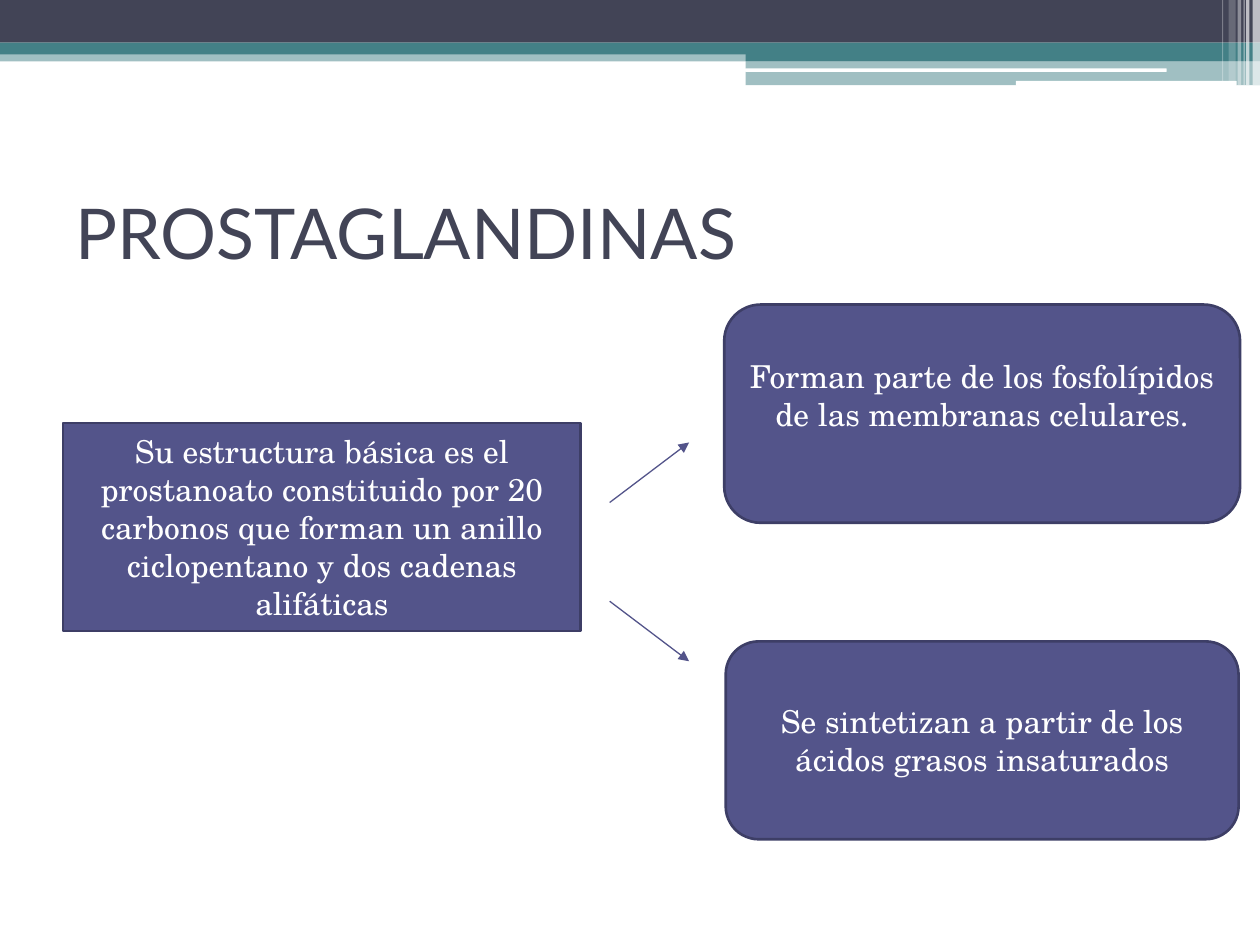
"""Build a slide on the structure and origin of prostaglandins."""
from lxml import etree
from pptx import Presentation
from pptx.dml.color import RGBColor
from pptx.enum.shapes import MSO_CONNECTOR, MSO_SHAPE
from pptx.enum.text import MSO_ANCHOR, PP_ALIGN
from pptx.oxml.ns import qn
from pptx.util import Cm, Pt

RECT = MSO_SHAPE.RECTANGLE
ROUND = MSO_SHAPE.ROUNDED_RECTANGLE
STRAIGHT = MSO_CONNECTOR.STRAIGHT
MIDDLE = MSO_ANCHOR.MIDDLE
CENTER = PP_ALIGN.CENTER
NAVY, TEAL, WHITE = "424456", "438086", "FFFFFF"
VIOLET, BORDER = "53548A", "3D3E66"


def color(hex_string):
    return RGBColor.from_string(hex_string)


def add_block(kind, left, top, width, height, fill, opacity=100):
    block = slide.shapes.add_shape(kind, Cm(left), Cm(top), Cm(width), Cm(height))
    block.shadow.inherit = False
    block.fill.solid()
    block.fill.fore_color.rgb = color(fill)
    block.line.fill.background()
    if opacity < 100:
        tint = block.fill._xPr.find(qn("a:solidFill"))[0]
        etree.SubElement(tint, qn("a:alpha"), val=str(opacity * 1000))
    return block


deck = Presentation()
deck.slide_width, deck.slide_height = Cm(25.4), Cm(19.05)
slide = deck.slides.add_slide(deck.slide_layouts[6])

bands = [
    (RECT, 0, 1.01, 25.4, 0.23, TEAL, 50),
    (RECT, 0, 0, 25.4, 0.86, NAVY, 100),
    (RECT, 0, 0.86, 25.4, 0.24, TEAL, 100),
    (RECT, 15.03, 1, 10.37, 0.23, TEAL, 100),
    (RECT, 15.03, 1.23, 10.37, 0.49, TEAL, 50),
    (ROUND, 15.02, 1.38, 8.5, 0.07, WHITE, 100),
    (ROUND, 20.48, 1.63, 4.45, 0.1, WHITE, 100),
]
for band in bands:
    add_block(*band)

stripes = [
    (25.25, 0.15, 1.72, 65),
    (25.12, 0.07, 1.72, 65),
    (25.07, 0.02, 1.72, 60),
    (24.95, 0.07, 1.72, 40),
    (24.77, 0.14, 1.63, 20),
    (24.64, 0.02, 1.63, 30),
]
for left, width, height, opacity in stripes:
    add_block(RECT, left, 0, width, height, WHITE, opacity)

title = slide.shapes.add_textbox(Cm(1.27), Cm(3.18), Cm(22.86), Cm(2.97))
title.text_frame.word_wrap = True
title.text_frame.vertical_anchor = MIDDLE
para = title.text_frame.paragraphs[0]
para.text = "PROSTAGLANDINAS"
para.font.size = Pt(40)
para.font.name = "Lato"
para.font.color.rgb = color(NAVY)

facts = [
    (RECT, 1.27, 8.53, 10.44, 4.19, 0.13,
     "Su estructura básica es el prostanoato constituido por 20 carbonos "
     "que forman un anillo ciclopentano y dos cadenas alifáticas"),
    (ROUND, 14.63, 12.93, 10.34, 3.99, 0.13,
     "Se sintetizan a partir de los ácidos grasos insaturados"),
    (ROUND, 14.6, 6.14, 10.4, 4.4, 0.89,
     "Forman parte de los fosfolípidos de las membranas celulares."),
]
for kind, left, top, width, height, bottom_margin, text in facts:
    box = add_block(kind, left, top, width, height, VIOLET)
    box.line.color.rgb = color(BORDER)
    box.line.width = Pt(1.5)
    frame = box.text_frame
    frame.word_wrap = True
    frame.vertical_anchor = MIDDLE
    frame.margin_bottom = Cm(bottom_margin)
    para = frame.paragraphs[0]
    para.text = text
    para.alignment = CENTER
    para.font.size = Pt(18)
    para.font.name = "TeX Gyre Schola"
    para.font.color.rgb = color(WHITE)

for start, end in [(10.13, 8.92), (12.12, 13.33)]:
    arrow = slide.shapes.add_connector(STRAIGHT, Cm(12.29), Cm(start), Cm(13.89), Cm(end))
    arrow.line.color.rgb = color(VIOLET)
    arrow.line.width = Pt(0.75)
    etree.SubElement(arrow.line._get_or_add_ln(), qn("a:tailEnd"), type="triangle")
    etree.SubElement(arrow._element.spPr, qn("a:effectLst"))

deck.save("out.pptx")
